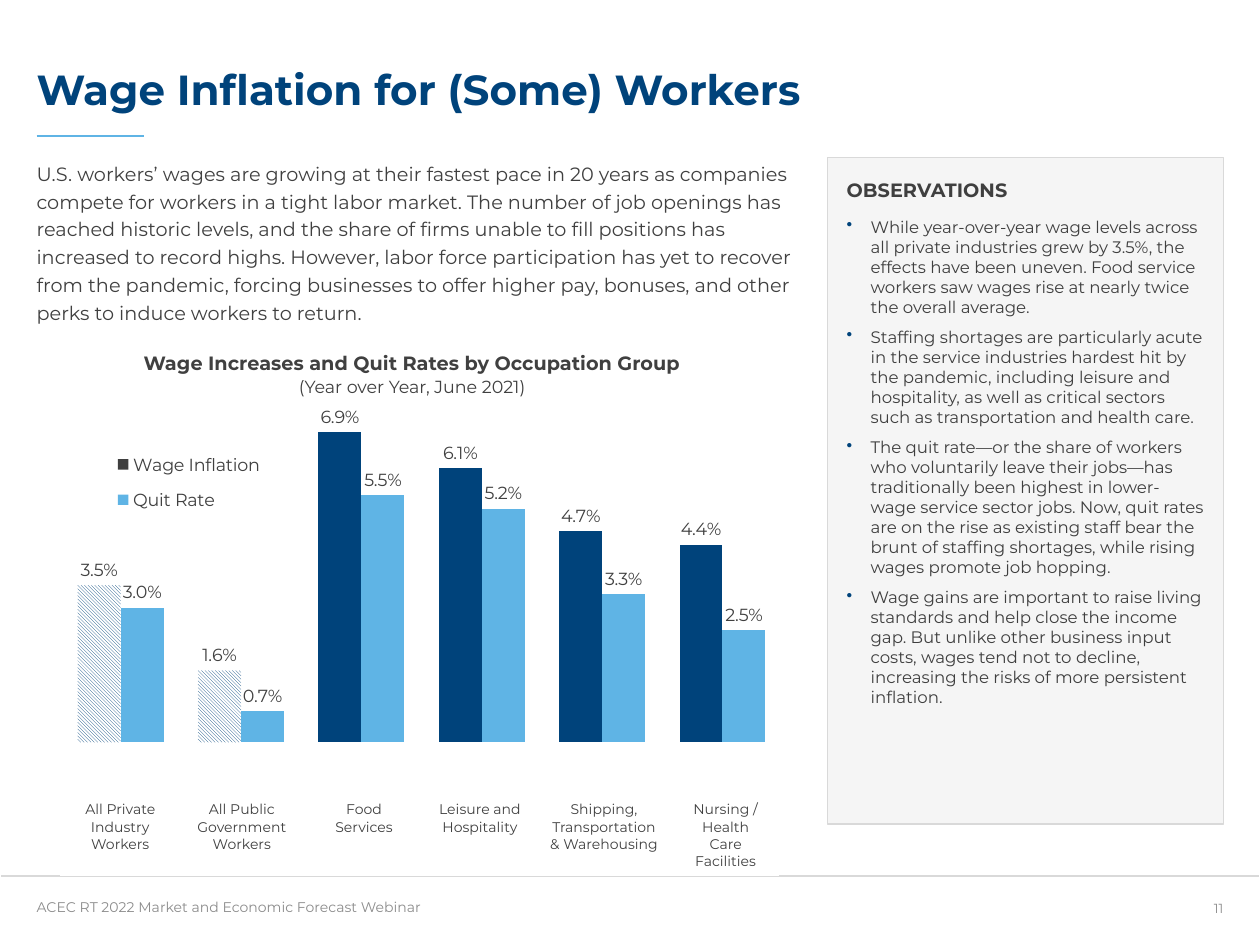
import dataclasses
import typing

import lxml.etree
import pptx
import pptx.chart.data
import pptx.dml.color
import pptx.enum.chart
import pptx.enum.dml
import pptx.enum.shapes
import pptx.enum.text
import pptx.oxml.ns
import pptx.util

Inches = pptx.util.Inches
Pt = pptx.util.Pt
qn = pptx.oxml.ns.qn
ALIGN = pptx.enum.text.PP_ALIGN
ANCHOR = pptx.enum.text.MSO_ANCHOR

FONT = "Montserrat"
NAVY, SKY = "00437B", "5FB4E5"
TEXT, DARK, MUTED, RULE = "404040", "3F3F3F", "8C8C8C", "D9D9D9"


@dataclasses.dataclass
class Block:
    box: tuple[float, float, float, float]
    paragraphs: list[str]
    size: float
    color: str = TEXT
    bold: bool = False
    margins: tuple[float, float, float, float] = (0, 0, 0, 0)
    anchor: typing.Any = ANCHOR.TOP
    layout: dict = dataclasses.field(default_factory=dict)
    bulleted: bool = False


@dataclasses.dataclass
class Rule:
    left: float
    right: float
    y: float
    color: str


@dataclasses.dataclass
class Measure:
    name: str
    values: list[float]
    color: str


def rgb(value: str) -> pptx.dml.color.RGBColor:
    return pptx.dml.color.RGBColor.from_string(value)


def apply(target, values: dict) -> None:
    for key, value in values.items():
        setattr(target, key, value)


def style_font(font, size: float, color: str, bold: bool = False) -> None:
    apply(font, {"name": FONT, "size": Pt(size), "bold": bold})
    font.color.rgb = rgb(color)


def add_bullet(paragraph) -> None:
    properties = paragraph._p.get_or_add_pPr()
    properties.set("marL", str(Inches(0.19)))
    properties.set("indent", str(-Inches(0.19)))
    color = lxml.etree.SubElement(properties, qn("a:buClr"))
    lxml.etree.SubElement(color, qn("a:srgbClr"), val=NAVY)
    lxml.etree.SubElement(properties, qn("a:buChar"), char="•")


def add_block(slide, block: Block):
    frame = slide.shapes.add_textbox(*map(Inches, block.box)).text_frame
    left, top, right, bottom = map(Inches, block.margins)
    apply(frame, {"word_wrap": True, "vertical_anchor": block.anchor,
                  "margin_left": left, "margin_top": top,
                  "margin_right": right, "margin_bottom": bottom})
    for index, words in enumerate(block.paragraphs):
        paragraph = frame.add_paragraph() if index else frame.paragraphs[0]
        if block.bulleted:
            add_bullet(paragraph)
        apply(paragraph, block.layout)
        run = paragraph.add_run()
        run.text = words
        style_font(run.font, block.size, block.color, block.bold)
    return frame


def add_rule(slide, rule: Rule) -> None:
    line = slide.shapes.add_connector(
        pptx.enum.shapes.MSO_CONNECTOR.STRAIGHT,
        Inches(rule.left), Inches(rule.y), Inches(rule.right), Inches(rule.y))
    line.line.color.rgb = rgb(rule.color)
    line.line.width = Pt(1)
    lxml.etree.SubElement(line._element.spPr, qn("a:effectLst"))


def manual_layout(inner: bool, x: float, y: float, w: float, h: float):
    layout = lxml.etree.Element(qn("c:layout"))
    manual = lxml.etree.SubElement(layout, qn("c:manualLayout"))
    settings = {"layoutTarget": "inner"} if inner else {}
    settings |= {"xMode": "edge", "yMode": "edge", "x": x, "y": y, "w": w, "h": h}
    for tag, value in settings.items():
        lxml.etree.SubElement(manual, qn(f"c:{tag}"), val=str(value))
    return layout


def add_wage_chart(slide, measures: list[Measure], hatched: int) -> None:
    data = pptx.chart.data.CategoryChartData(number_format="0.0%")
    data.categories = [str(n + 1) for n in range(len(measures[0].values))]
    for measure in measures:
        data.add_series(measure.name, measure.values)
    chart = slide.shapes.add_chart(
        pptx.enum.chart.XL_CHART_TYPE.COLUMN_CLUSTERED,
        *map(Inches, (0.48, 3.04, 5.82, 3.21)), data).chart
    style_font(chart.font, 10, TEXT)
    apply(chart, {"has_title": False, "has_legend": True})
    apply(chart.category_axis, {"visible": False})
    # The axis starts below zero to leave room under the bars
    apply(chart.value_axis, {"visible": False, "has_major_gridlines": False,
                             "minimum_scale": -0.01, "maximum_scale": 0.08})
    plot = chart.plots[0]
    apply(plot, {"gap_width": 80, "overlap": 0, "vary_by_categories": False})

    for series, measure in zip(plot.series, measures):
        series.invert_if_negative = False
        series.format.fill.solid()
        series.format.fill.fore_color.rgb = rgb(measure.color)
        apply(series.data_labels, {
            "show_value": True, "number_format": "0.0%",
            "number_format_is_linked": False,
            "position": pptx.enum.chart.XL_LABEL_POSITION.OUTSIDE_END})
        style_font(series.data_labels.font, 10, TEXT)

    # Overall groups are hatched, single industries are solid navy
    for index in range(len(measures[0].values)):
        fill = plot.series[0].points[index].format.fill
        if index < hatched:
            fill.patterned()
            fill.pattern = pptx.enum.dml.MSO_PATTERN.DARK_DOWNWARD_DIAGONAL
            fill.back_color.rgb = rgb("FFFFFF")
        else:
            fill.solid()
        fill.fore_color.rgb = rgb(NAVY)

    legend = chart.legend
    apply(legend, {"position": pptx.enum.chart.XL_LEGEND_POSITION.RIGHT,
                   "include_in_layout": False})
    style_font(legend.font, 10, TEXT)
    legend._element.find(qn("c:legendPos")).addnext(
        manual_layout(False, 0.05, 0.14, 0.25, 0.21))
    area = chart._chartSpace.chart.plotArea
    for old in area.findall(qn("c:layout")):
        area.remove(old)
    area.insert(0, manual_layout(True, 0, 0, 0.985, 1))


def add_group_labels(slide, groups: dict[str, float]) -> None:
    table = slide.shapes.add_table(
        1, len(groups), *map(Inches, (0.48, 6.31, 5.7, 0.63))).table
    apply(table, {"first_row": False, "horz_banding": False})
    for index, (label, width) in enumerate(groups.items()):
        table.columns[index].width = Inches(width)
        cell = table.cell(0, index)
        cell.fill.background()
        cell.text = label
        for paragraph in cell.text_frame.paragraphs:
            paragraph.alignment = ALIGN.CENTER
            for run in paragraph.runs:
                style_font(run.font, 8, TEXT)


def add_panel(slide) -> None:
    panel = slide.shapes.add_shape(pptx.enum.shapes.MSO_SHAPE.RECTANGLE,
                                   *map(Inches, (6.57, 1.25, 3.14, 5.29)))
    panel.shadow.inherit = False
    panel.fill.solid()
    panel.fill.fore_color.rgb = rgb("F2F2F2")
    tint = panel._element.spPr.find(qn("a:solidFill"))[0]
    lxml.etree.SubElement(tint, qn("a:alpha"), val="75000")
    panel.line.color.rgb = rgb(RULE)
    panel.line.width = Pt(0.75)


INTRO = "U.S. workers’ wages are growing at their fastest pace in 20 years as companies compete for workers in a tight labor market. The number of job openings has reached historic levels, and the share of firms unable to fill positions has increased to record highs. However, labor force participation has yet to recover from the pandemic, forcing businesses to offer higher pay, bonuses, and other perks to induce workers to return."
OBSERVATIONS = [
    "While year-over-year wage levels across all private industries grew by 3.5%, the effects have been uneven. Food service workers saw wages rise at nearly twice the overall average.",
    "Staffing shortages are particularly acute in the service industries hardest hit by the pandemic, including leisure and hospitality, as well as critical sectors such as transportation and health care.",
    "The quit rate—or the share of workers who voluntarily leave their jobs—has traditionally been highest in lower-wage service sector jobs. Now, quit rates are on the rise as existing staff bear the brunt of staffing shortages, while rising wages promote job hopping.",
    "Wage gains are important to raise living standards and help close the income gap. But unlike other business input costs, wages tend not to decline, increasing the risks of more persistent inflation.",
]
BLOCKS = [
    Block((9.45, 7.1, 0.26, 0.22), ["11"], 7.5, MUTED, anchor=ANCHOR.MIDDLE,
          layout={"alignment": ALIGN.RIGHT}),
    Block((0.29, 0.12, 9.42, 0.78), ["Wage Inflation for (Some) Workers"], 24, NAVY, True,
          anchor=ANCHOR.BOTTOM, layout={"line_spacing": 0.8}),
    Block((0.29, 7.13, 4.71, 0.16), ["ACEC RT 2022 Market and Economic Forecast Webinar"], 8, MUTED),
    Block((0.29, 1.25, 6.01, 1.42), [INTRO], 11, layout={"line_spacing": 1.2}),
    Block((6.57, 1.72, 3.14, 4.75), OBSERVATIONS, 9.5, DARK, margins=(0.15, 0, 0.15, 0.15),
          layout={"space_after": Pt(6)}, bulleted=True),
    Block((6.57, 1.3, 3.14, 0.42), ["OBSERVATIONS"], 11, DARK, True,
          margins=(0.15, 0.15, 0.15, 0.15), anchor=ANCHOR.MIDDLE),
]
CHART_HEADING = Block((0.36, 2.72, 5.82, 0.48), ["Wage Increases and Quit Rates by Occupation Group"],
                      11, bold=True, margins=(0.1, 0.05, 0.1, 0.05),
                      layout={"alignment": ALIGN.CENTER, "line_spacing": 1.1})
MEASURES = [
    Measure("Wage Inflation", [0.035, 0.016, 0.069, 0.061, 0.047, 0.044], DARK),
    Measure("Quit Rate", [0.03, 0.007, 0.055, 0.052, 0.033, 0.025], SKY),
]
GROUPS = {"All Private Industry Workers": 0.95, "All Public Government Workers": 0.98,
          "Food\nServices": 0.96, "Leisure and Hospitality": 0.88,
          "Shipping, Transportation & Warehousing": 1.09, "Nursing / Health Care Facilities": 0.84}


def main() -> None:
    deck = pptx.Presentation()
    apply(deck, {"slide_width": Inches(10), "slide_height": Inches(7.5)})
    slide = deck.slides.add_slide(deck.slide_layouts[6])

    # Frame: rules and observation panel
    for rule in (Rule(0.01, 9.99, 6.95, RULE), Rule(0.29, 1.14, 1.08, SKY)):
        add_rule(slide, rule)
    add_panel(slide)

    # Wording
    for block in BLOCKS:
        add_block(slide, block)

    # Chart with its heading and group labels
    add_wage_chart(slide, MEASURES, hatched=2)
    heading = add_block(slide, CHART_HEADING).paragraphs[0]
    heading.add_line_break()
    period = heading.add_run()
    period.text = "(Year over Year, June 2021)"
    style_font(period.font, 10, TEXT)
    add_group_labels(slide, GROUPS)

    deck.save("out.pptx")


if __name__ == "__main__":
    main()
